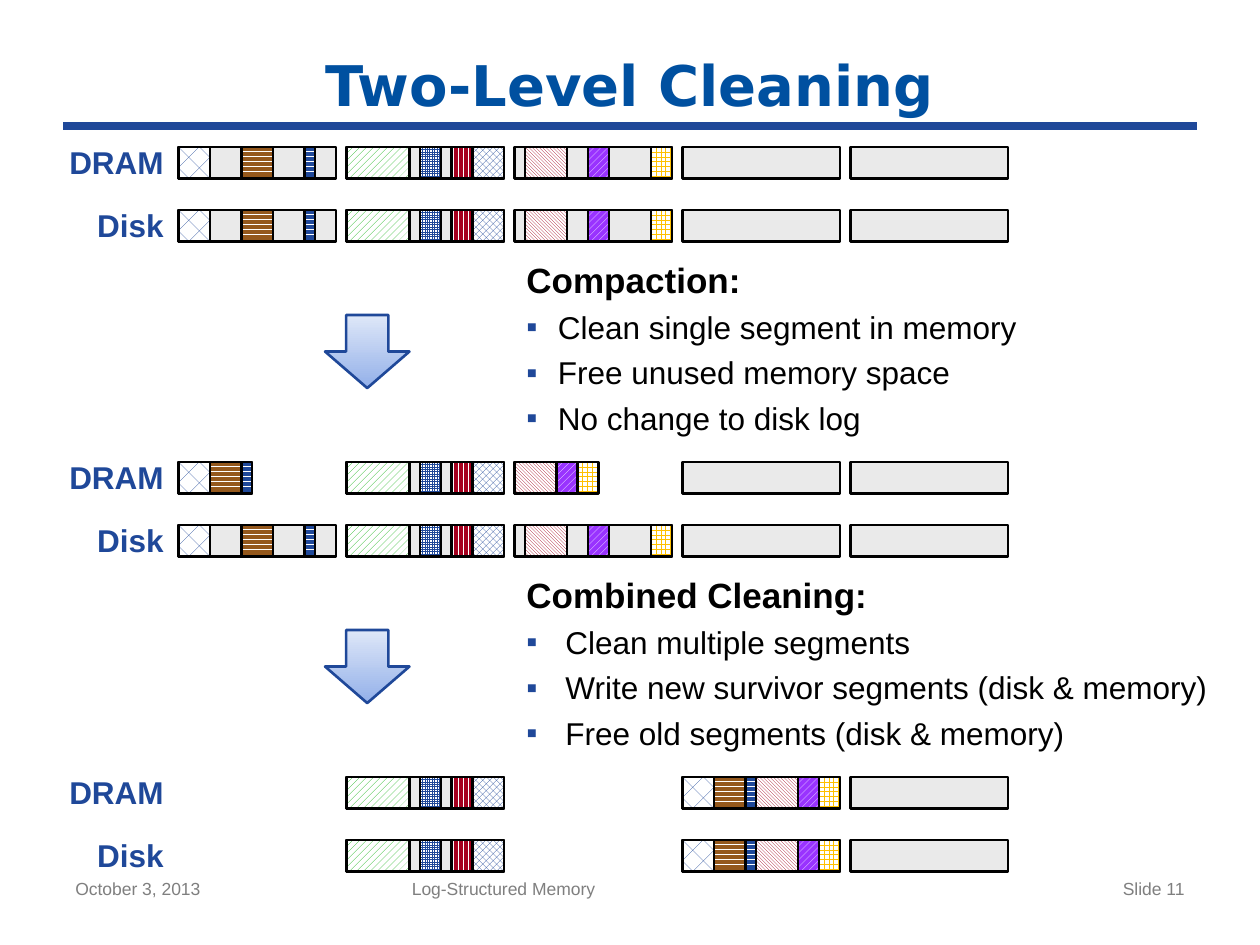
from typing import NamedTuple

from lxml.etree import SubElement
from pptx import Presentation
from pptx.dml.color import RGBColor
from pptx.enum.dml import MSO_PATTERN
from pptx.enum.shapes import MSO_CONNECTOR, MSO_SHAPE
from pptx.enum.text import MSO_ANCHOR, PP_ALIGN
from pptx.oxml.ns import qn
from pptx.util import Inches, Pt

COLORS = {
    "title": "0050A0",
    "blue": "1F4899",
    "green": "16B416",
    "brown": "94581C",
    "red": "A5001E",
    "purple": "9933FF",
    "gold": "FFC000",
    "free": "EAEAEA",
    "black": "000000",
    "white": "FFFFFF",
    "footer": "7F7F7F",
    "arrow_top": "DEE7F8",
    "arrow_bottom": "93B0E9",
}
UNIT = 1 / 12
LOG_LEFT = 17
SEGMENT_WIDTH = 15
SEGMENT_PITCH = 16
BAR_HEIGHT = 0.25


class Entry(NamedTuple):
    width: int
    pattern: MSO_PATTERN
    fore: str
    back: str = "white"


class Segment(NamedTuple):
    slot: int
    entries: tuple = ()
    width: int = SEGMENT_WIDTH


class Stage(NamedTuple):
    top: int
    memory: list
    disk: list


class Topic(NamedTuple):
    top: float
    width: float
    height: float
    indent: float
    heading: str
    points: list


class Style(NamedTuple):
    size: int
    color: str
    bold: bool = False
    align: PP_ALIGN = PP_ALIGN.LEFT
    font: str = "Arial"


BRICK = Entry(3, MSO_PATTERN.DIAGONAL_BRICK, "blue")
BROWN = Entry(3, MSO_PATTERN.DARK_HORIZONTAL, "brown")
NARROW = Entry(1, MSO_PATTERN.DARK_HORIZONTAL, "blue")
GREEN = Entry(6, MSO_PATTERN.WIDE_UPWARD_DIAGONAL, "green")
GRID = Entry(2, MSO_PATTERN.SMALL_GRID, "blue")
STRIPES = Entry(2, MSO_PATTERN.DARK_VERTICAL, "red")
CHECKER = Entry(3, MSO_PATTERN.LARGE_CHECKER_BOARD, "blue")
PINK = Entry(4, MSO_PATTERN.DARK_DOWNWARD_DIAGONAL, "red")
PURPLE = Entry(2, MSO_PATTERN.WIDE_UPWARD_DIAGONAL, "white", "purple")
GOLD = Entry(2, MSO_PATTERN.LARGE_GRID, "gold")

FIRST = Segment(0, ((0, BRICK), (6, BROWN), (12, NARROW)))
SECOND = Segment(1, ((0, GREEN), (7, GRID), (10, STRIPES), (12, CHECKER)))
THIRD = Segment(2, ((1, PINK), (7, PURPLE), (13, GOLD)))
FIRST_COMPACT = Segment(0, ((0, BRICK), (3, BROWN), (6, NARROW)), 7)
THIRD_COMPACT = Segment(2, ((0, PINK), (4, PURPLE), (6, GOLD)), 6)
SURVIVOR = Segment(3, ((0, BRICK), (3, BROWN), (6, NARROW), (7, PINK), (11, PURPLE), (13, GOLD)))
EMPTY = [Segment(3), Segment(4)]

FULL_LOG = [FIRST, SECOND, THIRD, *EMPTY]
COMPACT_LOG = [FIRST_COMPACT, SECOND, THIRD_COMPACT, *EMPTY]
CLEANED_LOG = [SECOND, SURVIVOR, Segment(4)]
STAGES = [
    Stage(14, FULL_LOG, FULL_LOG),
    Stage(44, COMPACT_LOG, FULL_LOG),
    Stage(74, CLEANED_LOG, CLEANED_LOG),
]
TOPICS = [
    Topic(2, 5.5, 1.75, 0.25, "Compaction:", [
        "Clean single segment in memory",
        "Free unused memory space",
        "No change to disk log",
    ]),
    Topic(4.5, 5.67, 1.58, 0.31, "Combined Cleaning:", [
        "Clean multiple segments",
        "Write new survivor segments (disk & memory)",
        "Free old segments (disk & memory)",
    ]),
]


def rgb(name: str) -> RGBColor:
    return RGBColor.from_string(COLORS[name])


def format_para(para, style: Style) -> None:
    para.alignment = style.align
    for span in para.runs:
        span.font.name = style.font
        span.font.size = Pt(style.size)
        span.font.bold = style.bold
        span.font.color.rgb = rgb(style.color)


def add_text(page, left: float, top: float, width: float, height: float, text: str, style: Style):
    box = page.shapes.add_textbox(Inches(left), Inches(top), Inches(width), Inches(height))
    box.text_frame.text = text
    box.text_frame.word_wrap = True
    format_para(box.text_frame.paragraphs[0], style)
    return box


def add_outlined(page, kind: MSO_SHAPE, left: float, top: float, width: float, height: float, line: str):
    shape = page.shapes.add_shape(kind, Inches(left), Inches(top), Inches(width), Inches(height))
    shape.shadow.inherit = False
    shape.line.color.rgb = rgb(line)
    shape.line.width = Pt(1.5)
    return shape


def add_bar(page, left: int, top: int, width: int):
    return add_outlined(page, MSO_SHAPE.RECTANGLE, left * UNIT, top * UNIT, width * UNIT, BAR_HEIGHT, "black")


def add_segment(page, segment: Segment, top: int) -> None:
    left = LOG_LEFT + segment.slot * SEGMENT_PITCH
    bar = add_bar(page, left, top, segment.width)
    bar.fill.solid()
    bar.fill.fore_color.rgb = rgb("free")
    for offset, entry in segment.entries:
        block = add_bar(page, left + offset, top, entry.width)
        block.fill.patterned()
        block.fill.pattern = entry.pattern
        block.fill.fore_color.rgb = rgb(entry.fore)
        block.fill.back_color.rgb = rgb(entry.back)


def add_log(page, name: str, name_width: float, segments: list, top: int) -> None:
    style = Style(18, "blue", True, PP_ALIGN.RIGHT)
    label = add_text(page, 1.3 - name_width, top * UNIT - 0.03, name_width, 0.3, name, style)
    frame = label.text_frame
    frame.word_wrap = False
    frame.margin_left = frame.margin_right = frame.margin_top = frame.margin_bottom = 0
    for segment in segments:
        add_segment(page, segment, top)


def add_topic(page, topic: Topic) -> None:
    box = add_text(page, 4.08, topic.top, topic.width, topic.height, topic.heading, Style(20, "black", True))
    for point in topic.points:
        para = box.text_frame.add_paragraph()
        para.text = point
        para.space_before = Pt(4.4)
        format_para(para, Style(18, "black"))
        properties = para._p.get_or_add_pPr()
        properties.set("marL", str(Inches(topic.indent)))
        properties.set("indent", str(-Inches(topic.indent)))
        bullet_color = SubElement(properties, qn("a:buClr"))
        SubElement(bullet_color, qn("a:srgbClr"), val=COLORS["blue"])
        SubElement(properties, qn("a:buFont"), typeface="Arial")
        SubElement(properties, qn("a:buChar"), char="▪")
    arrow = add_outlined(page, MSO_SHAPE.DOWN_ARROW, 2.58, topic.top + 0.5, 0.67, 0.58, "blue")
    arrow.fill.gradient()
    arrow.fill.gradient_angle = 270
    for stop, color in zip(arrow.fill.gradient_stops, ("arrow_top", "arrow_bottom")):
        stop.color.rgb = rgb(color)


def main() -> None:
    deck = Presentation()
    deck.slide_width, deck.slide_height = Inches(10), Inches(7.5)
    page = deck.slides.add_slide(deck.slide_layouts[6])
    rule = page.shapes.add_connector(MSO_CONNECTOR.STRAIGHT, Inches(0.5), Inches(1), Inches(9.5), Inches(1))
    rule.line.color.rgb = rgb("blue")
    rule.line.width = Pt(4.5)
    SubElement(rule._element.spPr, qn("a:effectLst"))
    title_style = Style(32, "title", True, PP_ALIGN.CENTER, "DejaVu Sans")
    title = add_text(page, 0.5, 0.33, 9, 0.67, "Two-Level Cleaning", title_style)
    title.text_frame.vertical_anchor = MSO_ANCHOR.MIDDLE
    for stage in STAGES:
        add_log(page, "DRAM", 0.76, stage.memory, stage.top)
        add_log(page, "Disk", 0.53, stage.disk, stage.top + 6)
    for topic in TOPICS:
        add_topic(page, topic)
    add_text(page, 0.5, 6.92, 2.33, 0.43, "October 3, 2013", Style(10, "footer"))
    add_text(page, 3.17, 6.92, 3.75, 0.43, "Log-Structured Memory", Style(10, "footer"))
    add_text(page, 7.17, 6.92, 2.33, 0.43, "Slide 11", Style(10, "footer", align=PP_ALIGN.RIGHT))
    deck.save("out.pptx")


if __name__ == "__main__":
    main()
